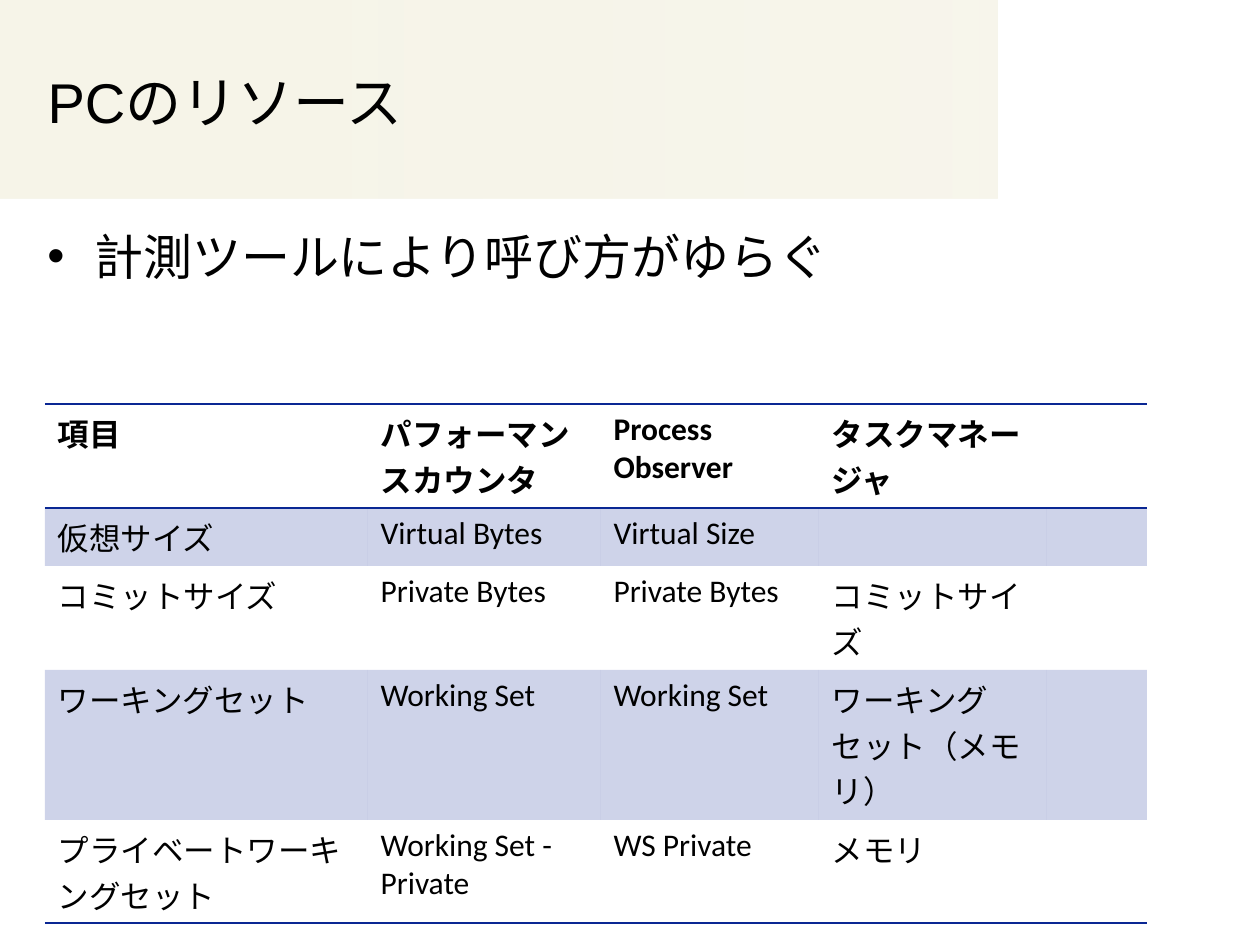
import pptx
import pptx.dml.color
import pptx.enum.shapes
import pptx.enum.text
import pptx.oxml
import pptx.oxml.ns
import pptx.util
from lxml import etree

PX = 914400 / 126
BLACK = pptx.dml.color.RGBColor(0, 0, 0)
NAVY = pptx.dml.color.RGBColor(0x0A, 0x27, 0x93)
CREAM = pptx.dml.color.RGBColor(0xF6, 0xF4, 0xE8)
NO_STYLE = "{2D5ABB26-0587-4C30-8999-92F81FD0307C}"

COLUMN_WIDTHS = [323, 233, 218, 228, 100]
ROW_HEIGHTS = [104, 58, 104, 150, 103]
ROWS = [
    ["項目", "パフォーマンスカウンタ", "Process Observer", "タスクマネージャ", ""],
    ["仮想サイズ", "Virtual Bytes", "Virtual Size", "", ""],
    ["コミットサイズ", "Private Bytes", "Private Bytes", "コミットサイズ", ""],
    ["ワーキングセット", "Working Set", "Working Set", "ワーキングセット（メモリ）", ""],
    ["プライベートワーキングセット", "Working Set - Private", "WS Private", "メモリ", ""],
]


def px(length):
    return pptx.util.Emu(round(length * PX))


def xml(text):
    return pptx.oxml.parse_xml(
        text.replace(">", f" {pptx.oxml.ns.nsdecls('a')}>", 1))


def format_font(para, name, size, bold=False):
    values = {"name": name, "size": pptx.util.Pt(size), "bold": bold}
    for holder in [para, *para.runs]:
        for key, value in values.items():
            setattr(holder.font, key, value)
        holder.font.color.rgb = BLACK


def add_band(page, left, top, width, height):
    """Draw the faint gradient band behind the title."""
    band = page.shapes.add_shape(
        pptx.enum.shapes.MSO_SHAPE.RECTANGLE,
        px(left), px(top), px(width), px(height))
    band.shadow.inherit = False
    band.line.fill.background()
    stops = "".join(
        f'<a:gs pos="{position * 1000}"><a:srgbClr val="{CREAM}">'
        f'<a:alpha val="{alpha * 1000}"/></a:srgbClr></a:gs>'
        for position, alpha in [(0, 80), (0, 100), (100, 85)])
    gradient = xml("<a:gradFill><a:gsLst>" + stops
                   + '</a:gsLst><a:lin ang="0" scaled="0"/></a:gradFill>')
    band.element.spPr.find(pptx.oxml.ns.qn("a:prstGeom")).addnext(gradient)
    page.shapes._spTree.insert(2, band.element)


def place_title(page, left, top, width, height):
    title = page.shapes.title
    title.left, title.top = px(left), px(top)
    title.width, title.height = px(width), px(height)
    frame = title.text_frame
    frame.text = "PCのリソース"
    frame.auto_size = pptx.enum.text.MSO_AUTO_SIZE.NONE
    frame.vertical_anchor = pptx.enum.text.MSO_ANCHOR.MIDDLE
    para = frame.paragraphs[0]
    para.alignment = pptx.enum.text.PP_ALIGN.LEFT
    format_font(para, "Arial", 32)


def add_bullet_text(page, left, top, width, height):
    box = page.shapes.add_textbox(px(left), px(top), px(width), px(height))
    frame = box.text_frame
    frame.word_wrap = True
    para = frame.paragraphs[0]
    para.text = "計測ツールにより呼び方がゆらぐ"
    properties = para._p.get_or_add_pPr()
    properties.set("marL", str(px(47)))
    properties.set("indent", str(px(-47)))
    properties.append(xml('<a:buFont typeface="Arial"></a:buFont>'))
    properties.append(xml('<a:buChar char="•"></a:buChar>'))
    format_font(para, "Arial", 28)


def set_borders(cell, sides):
    properties = cell._tc.get_or_add_tcPr()
    for index, side in enumerate(sides):
        properties.insert(index, xml(
            f'<a:ln{side} w="12700"><a:solidFill><a:srgbClr val="{NAVY}"/>'
            f"</a:solidFill></a:ln{side}>"))


def shade(cell):
    """Fill a cell with navy at 20% opacity."""
    cell.fill.solid()
    cell.fill.fore_color.rgb = NAVY
    color = next(cell._tc.tcPr.iter(pptx.oxml.ns.qn("a:srgbClr")))
    etree.SubElement(color, pptx.oxml.ns.qn("a:alpha"), val="20000")


def add_resource_table(page, left, top):
    frame = page.shapes.add_table(
        len(ROWS), len(COLUMN_WIDTHS), px(left), px(top),
        px(sum(COLUMN_WIDTHS)), px(sum(ROW_HEIGHTS)))
    table = frame.table
    table._tbl.tblPr.find(pptx.oxml.ns.qn("a:tableStyleId")).text = NO_STYLE
    for column, width in zip(table.columns, COLUMN_WIDTHS):
        column.width = px(width)
    borders = {0: "TB", len(ROWS) - 1: "B"}
    for row_index, (words, height) in enumerate(zip(ROWS, ROW_HEIGHTS)):
        table.rows[row_index].height = px(height)
        for column_index, word in enumerate(words):
            cell = table.cell(row_index, column_index)
            cell.text = word
            format_font(cell.text_frame.paragraphs[0], "Calibri", 18,
                        bold=row_index == 0)
            if row_index % 2:
                shade(cell)
            else:
                cell.fill.background()
            set_borders(cell, borders.get(row_index, ""))


def main():
    deck = pptx.Presentation()
    deck.slide_width, deck.slide_height = px(1260), px(945)
    page = deck.slides.add_slide(deck.slide_layouts.get_by_name("Title Only"))
    add_band(page, 0, 0, 998, 198)
    place_title(page, 35, 38, 942, 127)
    add_bullet_text(page, 35, 220, 1134, 624)
    add_resource_table(page, 45, 404)
    deck.save("out.pptx")


if __name__ == "__main__":
    main()
